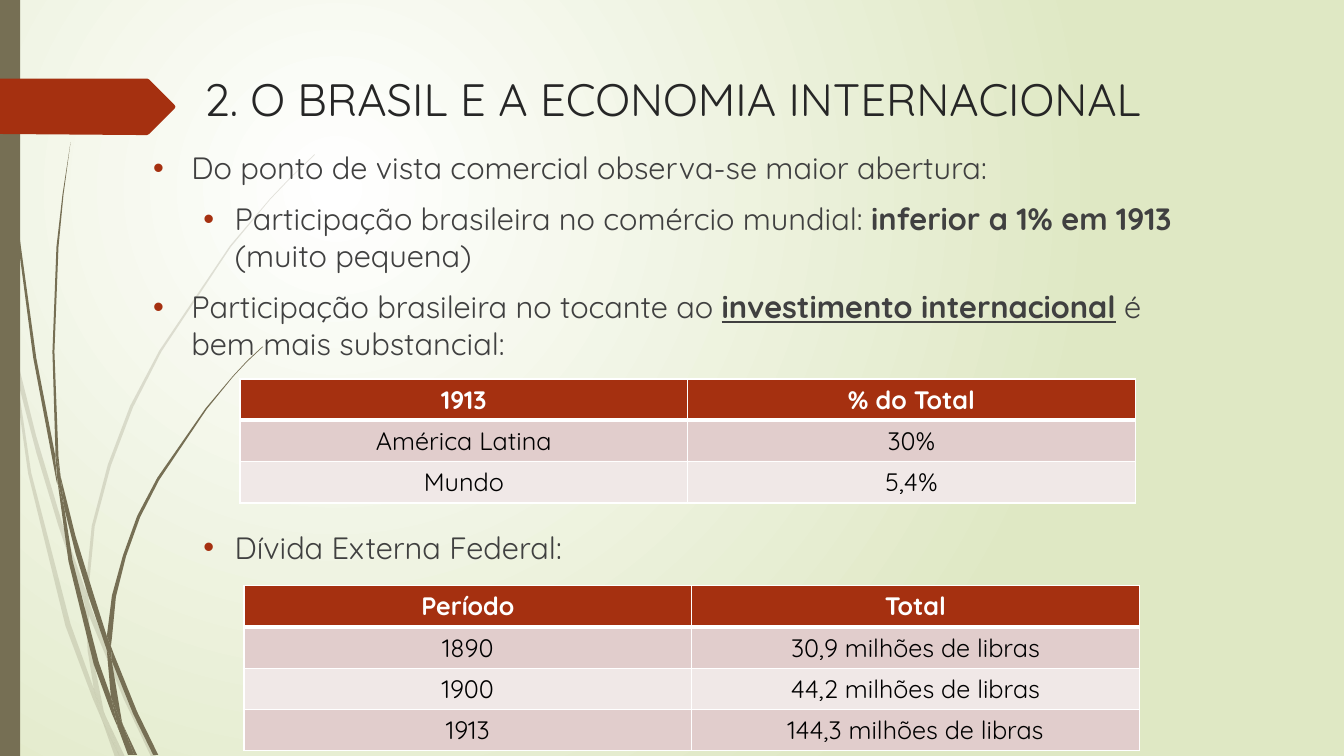
from lxml import etree
from pptx import Presentation
from pptx.dml.color import RGBColor
from pptx.enum.shapes import MSO_SHAPE
from pptx.enum.text import PP_ALIGN
from pptx.oxml import parse_xml
from pptx.oxml.ns import qn
from pptx.util import Pt

PX = 9144  # 100 px to the inch
FONT = "Quicksand"
NS = 'xmlns:a="http://schemas.openxmlformats.org/drawingml/2006/main"'
OLIVE, RUST, WHITE, GREEN = "766F54", "A53010", "FFFFFF", "DFE8C4"
BODY_GREY = "404040"


def rgb(hex_color):
    return RGBColor.from_string(hex_color)


def add_run(p, text, size, color, bold=False, underline=False):
    r = p.add_run()
    r.text = text
    f = r.font
    f.name, f.size, f.bold, f.underline = FONT, Pt(size), bold, underline
    f.color.rgb = rgb(color)


prs = Presentation()
prs.slide_width, prs.slide_height = 1333 * PX, 750 * PX
s = prs.slides.add_slide(prs.slide_layouts[6])

# Radial background
s.background.fill.solid()
solid = s.background._cSld.find(".//" + qn("a:solidFill"))
solid.getparent().replace(solid, parse_xml(
    f'<a:gradFill {NS} rotWithShape="1"><a:gsLst>'
    f'<a:gs pos="0"><a:srgbClr val="{WHITE}"/></a:gs>'
    f'<a:gs pos="100000"><a:srgbClr val="{GREEN}"/></a:gs></a:gsLst>'
    '<a:path path="circle"><a:fillToRect l="50000" t="50000" r="100000" b="100000"/>'
    '</a:path></a:gradFill>'))

# Outlines of the grass pieces and of the title tag
pale_grass = [
    [(11, 350), (9, 322), (0, 282), (0, 299), (10, 344)],
    [(58, 522), (84, 599), (85, 586), (62, 520), (36, 433), (14, 345), (17, 376), (36, 449)],
    [(92, 607), (88, 596), (88, 610), (123, 694), (150, 751), (155, 751), (127, 692)],
    [(119, 751), (124, 751), (105, 711)],
    [(93, 683), (70, 619), (31, 469), (17, 376), (11, 350), (28, 470), (65, 621), (92, 693),
     (101, 714), (99, 707)],
    [(84, 599), (87, 646), (93, 683), (96, 692), (105, 711), (103, 706), (91, 646), (88, 610),
     (88, 608)],
    [(88, 584), (94, 522), (110, 462), (132, 404), (160, 349), (229, 245), (268, 198),
     (290, 175), (312, 154), (312, 153), (289, 175), (268, 197), (228, 244), (158, 348),
     (129, 403), (107, 461), (91, 522), (85, 584), (85, 586), (88, 596)],
    [(101, 714), (114, 751), (119, 751)],
    [(88, 608), (88, 610), (88, 596), (85, 586), (84, 599)],
    [(96, 692), (93, 683), (99, 707), (101, 714), (119, 751), (105, 711)],
]
dark_grass = [
    [(7, 110), (17, 233), (33, 355), (56, 477), (57, 481), (55, 457), (55, 453), (36, 355),
     (19, 232), (8, 109), (5, 48), (4, 0), (3, 0), (4, 48)],
    [(88, 592), (106, 645), (106, 631), (93, 590), (75, 532), (60, 472), (64, 505), (75, 549)],
    [(113, 649), (110, 641), (111, 656), (132, 708), (152, 749), (157, 749), (136, 706)],
    [(110, 691), (98, 657), (72, 556), (64, 505), (57, 477), (68, 557), (93, 659), (111, 708),
     (117, 722), (116, 717)],
    [(60, 472), (58, 453), (54, 349), (58, 245), (63, 193), (70, 141), (62, 193), (56, 245),
     (52, 349), (55, 449)],
    [(133, 749), (136, 749), (122, 719)],
    [(57, 477), (64, 505), (60, 472), (55, 449), (55, 453)],
    [(111, 633), (115, 592), (125, 552), (139, 513), (158, 476), (205, 406), (231, 374),
     (245, 359), (261, 344), (260, 344), (245, 358), (231, 373), (204, 405), (156, 474),
     (136, 512), (122, 551), (111, 591), (106, 631), (110, 641)],
    [(117, 722), (127, 749), (131, 749)],
    [(106, 645), (110, 691), (116, 706), (122, 719), (121, 716), (111, 656), (109, 651)],
    [(106, 645), (109, 651), (111, 656), (110, 641), (106, 631), (106, 633)],
    [(116, 706), (110, 691), (116, 717), (117, 722), (130, 749), (133, 749), (122, 719)],
]
title_tag = [(0, 78), (146, 78), (148, 79), (173, 104), (174, 106), (173, 108), (148, 133),
             (146, 134), (136, 134), (0, 133)]


def add_outlines(outlines, color, opacity=100):
    for start, *rest in outlines:
        builder = s.shapes.build_freeform(*start, scale=PX)
        builder.add_line_segments(rest, close=True)
        sp = builder.convert_to_shape()
        sp.shadow.inherit = False
        sp.fill.solid()
        sp.fill.fore_color.rgb = rgb(color)
        sp.line.fill.background()
        if opacity < 100:
            clr = sp.fill._xPr.find(".//" + qn("a:srgbClr"))
            etree.SubElement(clr, qn("a:alpha"), val=str(opacity * 1000))


add_outlines(pale_grass, OLIVE, 20)
add_outlines(dark_grass, OLIVE)

side_bar = s.shapes.add_shape(MSO_SHAPE.RECTANGLE, 0, 0, 20 * PX, 750 * PX)
side_bar.shadow.inherit = False
side_bar.fill.solid()
side_bar.fill.fore_color.rgb = rgb(OLIVE)
side_bar.line.fill.background()

add_outlines([title_tag], RUST)

# Title
tf = s.shapes.add_textbox(142 * PX, 66 * PX, 1050 * PX, 77 * PX).text_frame
tf.word_wrap = True
tf.paragraphs[0].alignment = PP_ALIGN.CENTER
add_run(tf.paragraphs[0], "2. O BRASIL E A ECONOMIA INTERNACIONAL", 32.4, "262626")

# Bullets: level, space before, runs of (text, bold, underline)
bullets = [
    (0, 0, [("Do ponto de vista comercial observa-se maior abertura:", False, False)]),
    (1, 10, [("Participação brasileira no comércio mundial: ", False, False),
             ("inferior a 1% em 1913", True, False),
             (" (muito pequena)", False, False)]),
    (0, 10, [("Participação brasileira no tocante ao ", False, False),
             ("investimento internacional", True, True),
             (" é bem mais substancial:", False, False)]),
    (1, 119, [("Dívida Externa Federal:", False, False)]),
]
INDENTS = [(38, 38), (81, 31)]  # left margin, hanging
tf = s.shapes.add_textbox(142 * PX, 143 * PX, 1050 * PX, 591 * PX).text_frame
tf.word_wrap = True
for i, (level, before, runs) in enumerate(bullets):
    p = tf.add_paragraph() if i else tf.paragraphs[0]
    p.level = level
    p.space_before = Pt(before)
    margin, hanging = INDENTS[level]
    pPr = p._p.get_or_add_pPr()
    pPr.set("marL", str(margin * PX))
    pPr.set("indent", str(-hanging * PX))
    for xml in (f'<a:buClr {NS}><a:srgbClr val="{RUST}"/></a:buClr>',
                f'<a:buFont {NS} typeface="Arial"/>', f'<a:buChar {NS} char="•"/>'):
        pPr.append(parse_xml(xml))
    for text, bold, underline in runs:
        add_run(p, text, 22, BODY_GREY, bold, underline)

# Tables
COL_W, ROW_H = 444, 41
tables = [
    (238, 376, [("1913", "% do Total"), ("América Latina", "30%"), ("Mundo", "5,4%")]),
    (242, 581, [("Período", "Total"), ("1890", "30,9 milhões de libras"),
                ("1900", "44,2 milhões de libras"), ("1913", "144,3 milhões de libras")]),
]
for x, y, rows in tables:
    table = s.shapes.add_table(len(rows), 2, x * PX, y * PX, 2 * COL_W * PX,
                               len(rows) * ROW_H * PX).table
    for col in table.columns:
        col.width = COL_W * PX
    for i, row in enumerate(rows):
        table.rows[i].height = ROW_H * PX
        header = i == 0
        for j, text in enumerate(row):
            cell = table.cell(i, j)
            p = cell.text_frame.paragraphs[0]
            p.alignment = PP_ALIGN.CENTER
            add_run(p, text, 18, WHITE if header else "000000", bold=header)
            tcPr = cell._tc.get_or_add_tcPr()
            for side in "LRTB":
                thick = (i, side) in [(0, "B"), (1, "T")]
                tcPr.append(parse_xml(
                    f'<a:ln{side} {NS} w="{Pt(3 if thick else 1)}"><a:solidFill>'
                    f'<a:srgbClr val="{WHITE}"/></a:solidFill></a:ln{side}>'))
            cell.fill.solid()
            cell.fill.fore_color.rgb = rgb(
                RUST if header else "E1CDCC" if i % 2 else "F0E8E7")

prs.save("out.pptx")
